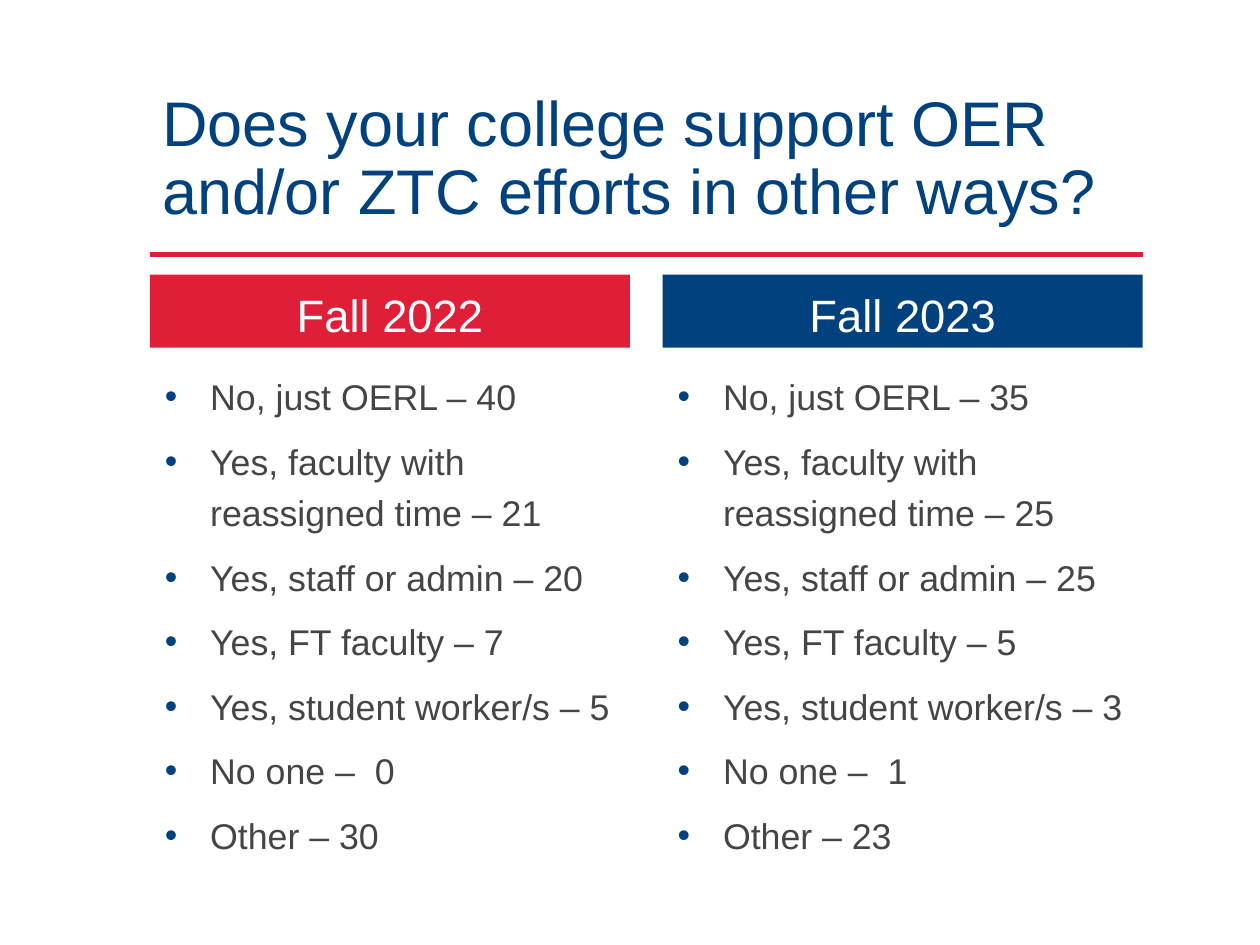
from pptx import Presentation, util as u
from pptx.dml.color import RGBColor
from pptx.enum import shapes, text
from pptx.oxml.ns import qn
from lxml import etree

RED, BLUE, WHITE, GREY = "DE1F37", "00417E", "FFFFFF", "454545"


def color(value):
    return RGBColor.from_string(value)


class Deck:
    font = "Arial"

    def __init__(self, width, height):
        self.prs = Presentation()
        self.prs.slide_width = u.Inches(width)
        self.prs.slide_height = u.Inches(height)
        self.s = self.prs.slides.add_slide(self.prs.slide_layouts[6])

    def style(self, p, size, fill, spacing, before=0):
        p.font.name = self.font
        p.font.size = u.Pt(size)
        p.font.color.rgb = color(fill)
        p.line_spacing = spacing
        p.space_before = u.Pt(before)

    def textbox(self, *box):
        tf = self.s.shapes.add_textbox(*map(u.Inches, box)).text_frame
        tf.word_wrap = True
        return tf

    def title(self, words, *box):
        tf = self.textbox(*box)
        tf.vertical_anchor = text.MSO_ANCHOR.BOTTOM
        p = tf.paragraphs[0]
        p.text = words
        self.style(p, 36, BLUE, 0.9)

    def rule(self, x1, x2, y):
        line = self.s.shapes.add_connector(
            shapes.MSO_CONNECTOR.STRAIGHT, *map(u.Inches, (x1, y, x2, y)))
        line.line.color.rgb = color(RED)
        line.line.width = u.Pt(2.5)
        etree.SubElement(line._element.spPr, qn("a:effectLst"))

    def header(self, words, fill, *box):
        sp = self.s.shapes.add_shape(shapes.MSO_SHAPE.RECTANGLE, *map(u.Inches, box))
        sp.shadow.inherit = False
        sp.fill.solid()
        sp.fill.fore_color.rgb = color(fill)
        sp.line.fill.background()
        tf = sp.text_frame
        tf.word_wrap = True
        tf.vertical_anchor = text.MSO_ANCHOR.BOTTOM
        p = tf.paragraphs[0]
        p.text = words
        p.alignment = text.PP_ALIGN.CENTER
        self.style(p, 25.9, WHITE, 0.8, 7.5)

    def bullets(self, items, *box):
        tf = self.textbox(*box)
        for i, item in enumerate(items):
            p = tf.add_paragraph() if i else tf.paragraphs[0]
            p.text = item
            self.style(p, 20.4, GREY, 1.2, 7.5)
            pPr = p._p.get_or_add_pPr()
            pPr.set("marL", str(u.Inches(0.5)))
            pPr.set("indent", str(u.Inches(-0.36)))
            bullet_color = etree.Element(qn("a:buClr"))
            etree.SubElement(bullet_color, qn("a:srgbClr"), val=BLUE)
            bullet_font = etree.Element(qn("a:buFont"), typeface=self.font)
            bullet = etree.Element(qn("a:buChar"), char="•")
            pPr.find(qn("a:defRPr")).addprevious(bullet_color)
            bullet_color.addnext(bullet_font)
            bullet_font.addnext(bullet)


ANSWERS = [
    "No, just OERL – ",
    "Yes, faculty with reassigned time – ",
    "Yes, staff or admin – ",
    "Yes, FT faculty – ",
    "Yes, student worker/s – ",
    "No one –  ",
    "Other – ",
]
TERMS = [
    ("Fall 2022", RED, 1.19, [40, 21, 20, 7, 5, 0, 30]),
    ("Fall 2023", BLUE, 5.26, [35, 25, 25, 5, 3, 1, 23]),
]


def main():
    deck = Deck(10, 7.5)
    deck.rule(1.19, 9.07, 2.02)
    deck.title("Does your college support OER and/or ZTC efforts in other ways?",
               1.19, 0.88, 7.88, 0.98)
    for term, fill, left, counts in TERMS:
        deck.header(term, fill, left, 2.18, 3.81, 0.58)
        items = [f"{answer}{count}" for answer, count in zip(ANSWERS, counts)]
        deck.bullets(items, left - 0.12, 2.86, 3.93, 4.5)
    deck.prs.save("out.pptx")


if __name__ == "__main__":
    main()
